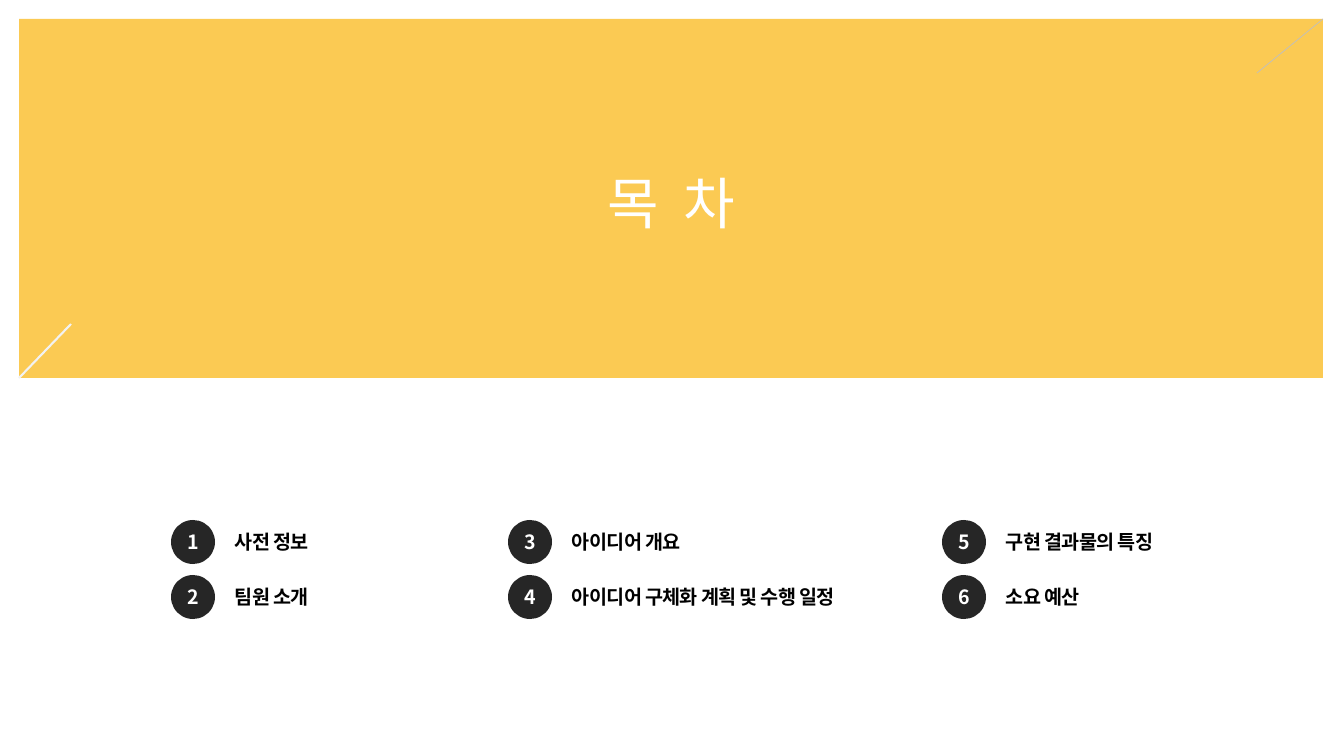
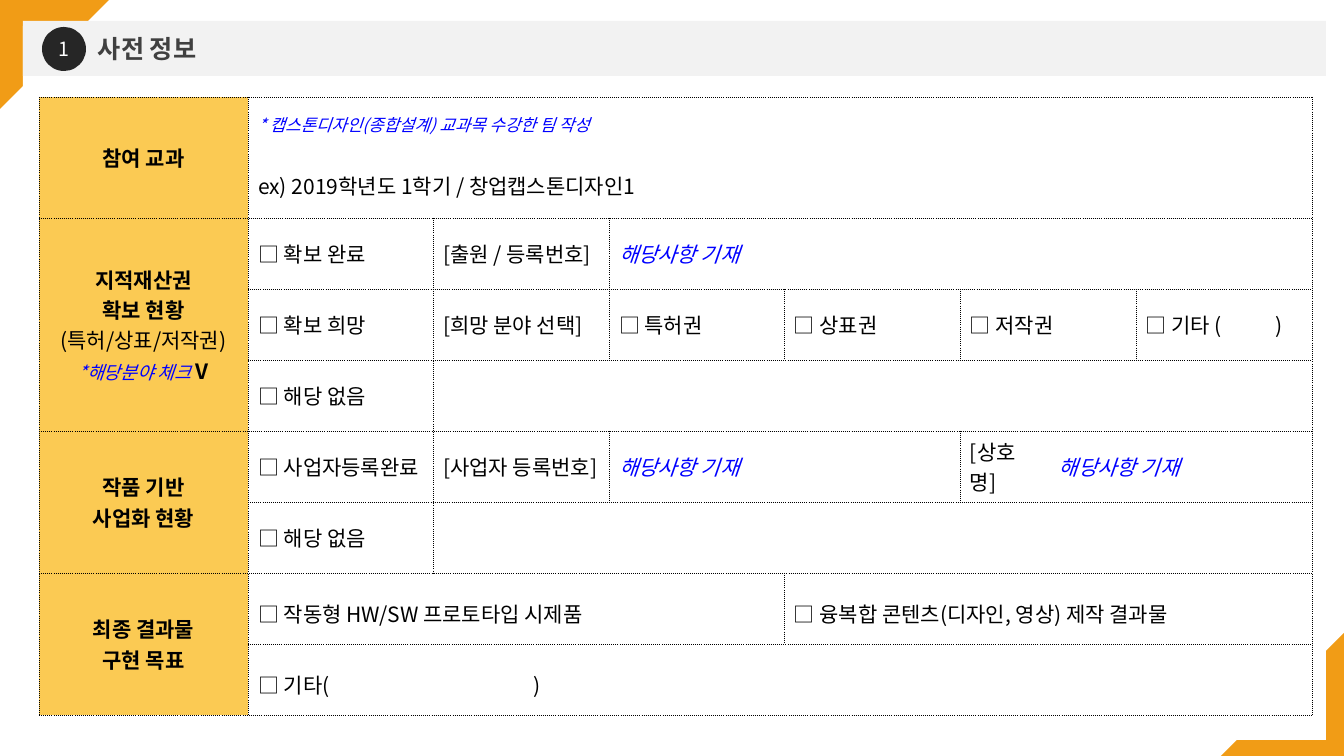
from dataclasses import dataclass
from typing import NamedTuple

from lxml.etree import SubElement
from pptx import Presentation
from pptx.dml.color import RGBColor
from pptx.enum.shapes import MSO_CONNECTOR as CONN, MSO_SHAPE as SHAPE
from pptx.enum.text import MSO_ANCHOR as ANCHOR, PP_ALIGN as ALIGN
from pptx.oxml.ns import qn
from pptx.util import Emu, Pt

# Shared look
SLIDE_W, SLIDE_H = 1344, 756
EMU_PER_PX = 12192000 / SLIDE_W
FONT = "Noto Sans CJK KR"
WHITE, BLACK, BLUE = "FFFFFF", "000000", "0000FF"
YELLOW, ORANGE, DARK = "FBCA53", "F19C16", "262626"
BAND, HEADING, SILVER = "F2F2F2", "404040", "BFBFBF"
BADGE = 44


def px(n: int) -> Emu:
    return Emu(round(n * EMU_PER_PX))


def rgb(color: str) -> RGBColor:
    return RGBColor.from_string(color)


# Text
def add_run(p, text: str, *, size: int = 15, color: str = BLACK, bold: bool = False,
            italic: bool = False, spacing: float = 0) -> None:
    r = p.add_run()
    r.text = text
    f = r.font
    f.size, f.bold, f.italic, f.name = Pt(size), bold, italic, FONT
    f.color.rgb = rgb(color)
    r_pr = f._element
    if spacing:
        r_pr.set("spc", str(round(spacing * 100)))
    SubElement(r_pr, qn("a:ea"), typeface=FONT)


def add_textbox(s, x: int, y: int, w: int, h: int, align=ALIGN.LEFT):
    tf = s.shapes.add_textbox(px(x), px(y), px(w), px(h)).text_frame
    tf.word_wrap = True
    tf.vertical_anchor = ANCHOR.MIDDLE
    p = tf.paragraphs[0]
    p.alignment = align
    return p


# Shapes
def add_shape(s, kind, x: int, y: int, w: int, h: int, fill: str, rotation: int = 0):
    sp = s.shapes.add_shape(kind, px(x), px(y), px(w), px(h))
    sp.shadow.inherit = False
    sp.fill.solid()
    sp.fill.fore_color.rgb = rgb(fill)
    sp.line.fill.background()
    sp.rotation = rotation
    return sp


def add_line(s, x1: int, y1: int, x2: int, y2: int, color: str, width: float) -> None:
    line = s.shapes.add_connector(CONN.STRAIGHT, px(x1), px(y1), px(x2), px(y2))
    line.line.color.rgb = rgb(color)
    line.line.width = Pt(width)
    SubElement(line._element.spPr, qn("a:effectLst"))


def add_badge(s, x: int, y: int, number: int, bold: bool) -> None:
    tf = add_shape(s, SHAPE.OVAL, x, y, BADGE, BADGE, DARK).text_frame
    tf.margin_left = tf.margin_right = tf.margin_top = tf.margin_bottom = 0
    tf.vertical_anchor = ANCHOR.MIDDLE
    p = tf.paragraphs[0]
    p.alignment = ALIGN.CENTER
    add_run(p, str(number), size=14, color=WHITE, bold=bold)


# Table model
class Span(NamedTuple):
    text: str
    size: int = 15
    color: str = BLACK
    bold: bool = False
    italic: bool = False


@dataclass
class Cell:
    row: int
    col: int
    lines: list[list[Span]]
    rows: int = 1
    cols: int = 1
    sides: str = "LRTB"
    tab: int = 0
    line_spacing: float | None = None
    label: bool = False


def plain(row: int, col: int, text: str, cols: int = 1, **options) -> Cell:
    return Cell(row, col, [[Span(text)]], cols=cols, **options)


def entry(row: int, col: int, cols: int, sides: str = "LRTB") -> Cell:
    return Cell(row, col, [[Span("해당사항 기재", color=BLUE, italic=True)]],
                cols=cols, sides=sides)


def label(row: int, rows: int, *titles: str, extra: tuple = ()) -> Cell:
    lines = [[Span(t, bold=True)] for t in titles]
    return Cell(row, 0, lines + list(extra), rows=rows, label=True)


def set_borders(cell, sides: str) -> None:
    tc_pr = cell._tc.get_or_add_tcPr()
    for side in "LRTB":
        ln = SubElement(tc_pr, qn(f"a:ln{side}"), w=str(Pt(0.25)))
        if side in sides:
            fill = SubElement(ln, qn("a:solidFill"))
            SubElement(fill, qn("a:srgbClr"), val=BLACK)
            SubElement(ln, qn("a:prstDash"), val="sysDot")
        else:
            SubElement(ln, qn("a:noFill"))


def outer_sides(c: Cell, i: int, j: int) -> str:
    """Sides of grid cell (i, j) that lie on the edge of the merged cell."""
    edges = {"L": j == 0, "R": j == c.cols - 1, "T": i == 0, "B": i == c.rows - 1}
    return "".join(side for side in c.sides if edges[side])


def fill_cell(table, c: Cell) -> None:
    cell = table.cell(c.row, c.col)
    for i in range(c.rows):
        for j in range(c.cols):
            part = table.cell(c.row + i, c.col + j)
            # A merge origin carries every side of its span
            set_borders(part, c.sides if i == j == 0 else outer_sides(c, i, j))
            part.fill.background()
    if c.rows * c.cols > 1:
        cell.merge(table.cell(c.row + c.rows - 1, c.col + c.cols - 1))
    if c.label:
        cell.fill.solid()
        cell.fill.fore_color.rgb = rgb(YELLOW)
    cell.vertical_anchor = ANCHOR.MIDDLE
    tf = cell.text_frame
    for n, line in enumerate(c.lines):
        p = tf.add_paragraph() if n else tf.paragraphs[0]
        p.alignment = ALIGN.CENTER if c.label else ALIGN.LEFT
        if c.line_spacing:
            p.line_spacing = c.line_spacing
        if c.tab:
            tabs = SubElement(p._p.get_or_add_pPr(), qn("a:tabLst"))
            SubElement(tabs, qn("a:tab"), pos=str(px(c.tab)), algn="l")
        for span in line:
            add_run(p, **span._asdict())


# Contents slide
MENU_X, MENU_Y, MENU_STEP = (171, 508, 942), 520, 55
MENU = ("사전 정보", "팀원 소개", "아이디어 개요", "아이디어 구체화 계획 및 수행 일정",
        "구현 결과물의 특징", "소요 예산")


def build_contents(prs) -> None:
    s = prs.slides.add_slide(prs.slide_layouts[6])
    add_shape(s, SHAPE.RECTANGLE, 19, 19, 1304, 359, YELLOW)
    p = add_textbox(s, 517, 163, 309, 78, ALIGN.CENTER)
    for text, spacing in (("목", -0.5), (" ", 8.5), ("차", -0.5)):
        add_run(p, text, size=40, color=WHITE, spacing=spacing)
    add_line(s, 1323, 19, 1257, 73, SILVER, 0.5)
    add_line(s, 71, 324, 19, 378, BAND, 1.5)
    for n, title in enumerate(MENU):
        x, y = MENU_X[n // 2], MENU_Y + n % 2 * MENU_STEP
        p = add_textbox(s, x + 54, y + 5, 328, 34)
        add_run(p, title, size=14, bold=True, spacing=-0.5)
        add_badge(s, x, y, n + 1, bold=True)


# Information slide
COLS = (209, 185, 176, 175, 176, 89, 87, 176)
ROWS = (55, 66) + (71,) * 7
CELLS = [
    label(0, 2, "참여 교과"),
    Cell(0, 1, [[Span("* 캡스톤디자인(종합설계) 교과목 수강한 팀 작성", 12, BLUE, italic=True)]],
         cols=7, sides="LRT"),
    plain(1, 1, "ex) 2019학년도 1학기 / 창업캡스톤디자인1", 7, sides="LRB"),
    label(2, 3, "지적재산권", "확보 현황", extra=(
        [Span("(특허/상표/저작권)")],
        [Span("*해당분야 체크 ", 13, BLUE, italic=True), Span("V", bold=True)])),
    plain(2, 1, "□ 확보 완료"),
    plain(2, 2, "[출원 / 등록번호]"),
    entry(2, 3, 5),
    plain(3, 1, "□ 확보 희망"),
    plain(3, 2, "[희망 분야 선택]"),
    plain(3, 3, "□ 특허권"),
    plain(3, 4, "□ 상표권"),
    plain(3, 5, "□ 저작권", 2),
    plain(3, 7, "□ 기타 (\t)", tab=130),
    plain(4, 1, "□ 해당 없음"),
    Cell(4, 2, [], cols=6),
    label(5, 2, "작품 기반", "사업화 현황"),
    plain(5, 1, "□ 사업자등록완료"),
    plain(5, 2, "[사업자 등록번호]"),
    entry(5, 3, 2),
    plain(5, 5, "[상호명]", sides="LTB"),
    entry(5, 6, 2, sides="RTB"),
    plain(6, 1, "□ 해당 없음"),
    Cell(6, 2, [], cols=6),
    label(7, 2, "최종 결과물", "구현 목표"),
    plain(7, 1, "□ 작동형 HW/SW 프로토타입 시제품", 3, line_spacing=1.3),
    plain(7, 4, "□ 융복합 콘텐츠(디자인, 영상) 제작 결과물", 4, line_spacing=1.3),
    plain(8, 1, "□ 기타(\t)", 7, line_spacing=1.3, tab=275),
]


def add_section_frame(s, number: int, title: str) -> None:
    add_shape(s, SHAPE.RIGHT_TRIANGLE, 0, -1, 110, 110, ORANGE, 90)
    add_shape(s, SHAPE.RIGHT_TRIANGLE, 1221, 633, 123, 123, ORANGE, 270)
    add_shape(s, SHAPE.RECTANGLE, 23, 26, 1303, 714, WHITE)
    add_shape(s, SHAPE.RECTANGLE, 23, 21, 1303, 55, BAND)
    add_run(add_textbox(s, 88, 28, 608, 40), title, size=18, color=HEADING, bold=True)
    add_badge(s, 42, 27, number, bold=False)


def build_information(prs) -> None:
    s = prs.slides.add_slide(prs.slide_layouts[6])
    add_section_frame(s, 1, MENU[0])
    table = s.shapes.add_table(len(ROWS), len(COLS), px(39), px(97),
                               px(sum(COLS)), px(sum(ROWS))).table
    table.first_row = table.horz_banding = False
    for column, width in zip(table.columns, COLS):
        column.width = px(width)
    for row, height in zip(table.rows, ROWS):
        row.height = px(height)
    for c in CELLS:
        fill_cell(table, c)


def main() -> None:
    prs = Presentation()
    prs.slide_width, prs.slide_height = px(SLIDE_W), px(SLIDE_H)
    build_contents(prs)
    build_information(prs)
    prs.save("out.pptx")


if __name__ == "__main__":
    main()
